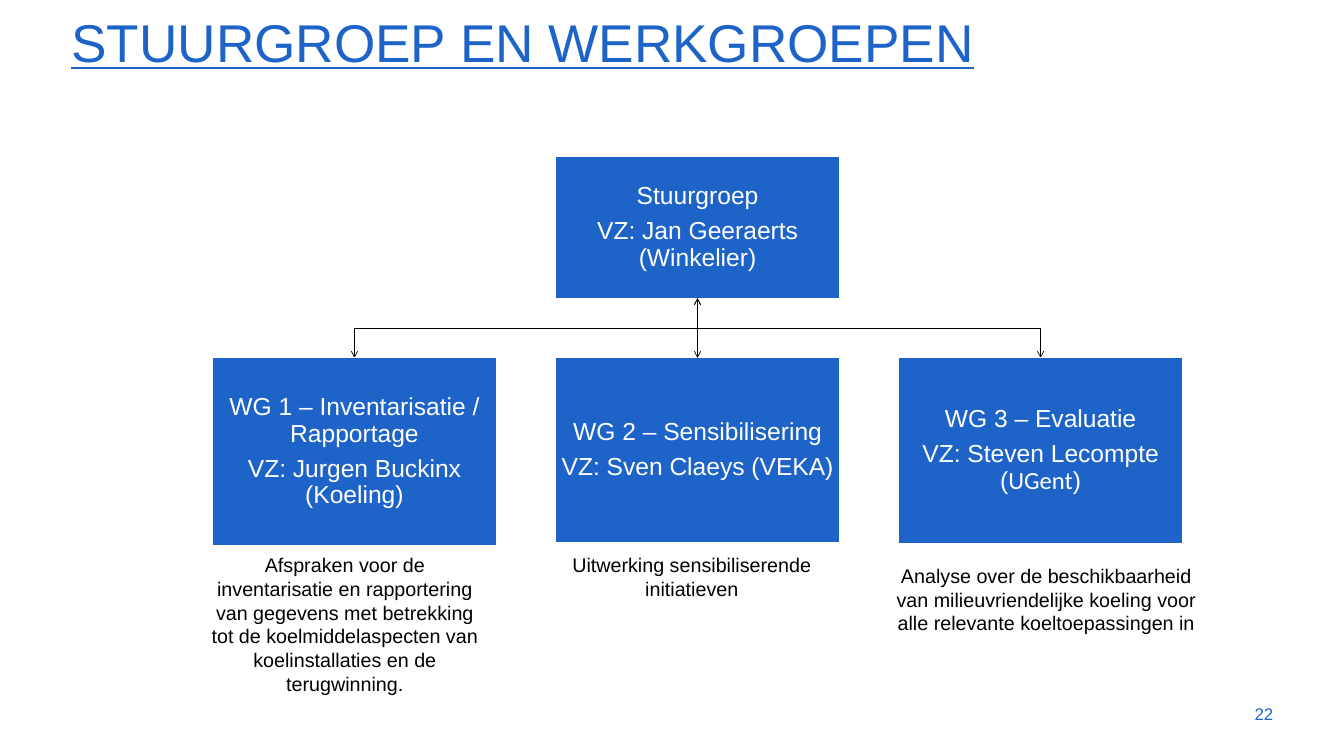
from lxml.etree import SubElement
from pptx import Presentation
from pptx.dml.color import RGBColor
from pptx.enum.shapes import MSO_CONNECTOR, MSO_SHAPE
from pptx.enum.text import MSO_ANCHOR as ANCHOR, PP_ALIGN as ALIGN
from pptx.oxml.ns import qn
from pptx.util import Pt

BLUE, WHITE, BLACK = "1E64C8", "FFFFFF", "000000"


def rgb(code):
    return RGBColor.from_string(code)


def write(shape, paragraphs, size, color, align, anchor, spacing=1.0, after=0, inset=None):
    frame = shape.text_frame
    frame.word_wrap = True
    frame.vertical_anchor = anchor
    if inset is not None:
        frame.margin_left = frame.margin_right = Pt(inset)
        frame.margin_top = frame.margin_bottom = Pt(inset)
    for index, runs in enumerate(paragraphs):
        paragraph = frame.add_paragraph() if index else frame.paragraphs[0]
        paragraph.alignment = align
        paragraph.line_spacing = spacing
        paragraph.space_before = Pt(0)
        paragraph.space_after = Pt(after)
        for words, font_name in runs:
            run = paragraph.add_run()
            run.text = words
            run.font.name = font_name
            run.font.size = Pt(size)
            run.font.color.rgb = rgb(color)


deck = Presentation()
deck.slide_width, deck.slide_height = Pt(1365.12), Pt(768.24)
slide = deck.slides.add_slide(deck.slide_layouts[6])
shapes = slide.shapes

title = shapes.add_textbox(Pt(65.5), Pt(10.8), Pt(1237), Pt(67.7))
write(title, [[("STUURGROEP EN WERKGROEPEN", "Arial")]], 54, BLUE, ALIGN.LEFT, ANCHOR.BOTTOM, 0.9)
title.text_frame.paragraphs[0].runs[0].font.underline = True

page_number = shapes.add_textbox(Pt(1227.6), Pt(704.9), Pt(72.7), Pt(41))
write(page_number, [[("22", "Arial")]], 17.1, BLUE, ALIGN.RIGHT, ANCHOR.MIDDLE)

group_width, group_step = 288, 348.48
first_left, steering_top, steering_height, working_top = 216, 159.12, 144, 363.6
steering_bottom = steering_top + steering_height
branch_y = (steering_bottom + working_top) / 2
lefts = [first_left + group_step * column for column in range(3)]
centers = [left + group_width / 2 for left in lefts]

branches = []
for center in (centers[2], centers[0]):
    outline = shapes.build_freeform(Pt(centers[1]), Pt(steering_bottom))
    outline.add_line_segments(
        [(Pt(centers[1]), Pt(branch_y)), (Pt(center), Pt(branch_y)), (Pt(center), Pt(working_top))],
        close=False,
    )
    branch = outline.convert_to_shape()
    branch.shadow.inherit = False
    branch.fill.background()
    branches.append((branch, ("headEnd", "tailEnd")))

groups = [
    (lefts[1], steering_top, steering_height,
     [[("Stuurgroep", "Arial")], [("VZ: Jan Geeraerts (Winkelier)", "Arial")]]),
    (lefts[0], working_top, 190.8,
     [[("WG 1 – Inventarisatie / Rapportage", "Arial")], [("VZ: Jurgen Buckinx (Koeling)", "Arial")]]),
    (lefts[1], working_top, 187.92,
     [[("WG 2 – Sensibilisering", "Arial")], [("VZ: Sven Claeys (VEKA)", "Arial")]]),
    (lefts[2], working_top, 188.64,
     [[("WG 3 – Evaluatie", "Arial")],
      [("VZ: Steven Lecompte (", "Arial"), ("UGent", "Calibri"), (")", "Arial")]]),
]
boxes = []
for left, top, height, paragraphs in groups:
    box = shapes.add_shape(MSO_SHAPE.RECTANGLE, Pt(left), Pt(top), Pt(group_width), Pt(height))
    box.shadow.inherit = False
    box.fill.solid()
    box.fill.fore_color.rgb = rgb(BLUE)
    box.line.color.rgb = rgb(WHITE)
    box.line.width = Pt(1)
    write(box, paragraphs, 25, WHITE, ALIGN.CENTER, ANCHOR.MIDDLE, 0.9, 8.75, 1.25)
    boxes.append(box)

trunk = shapes.add_connector(
    MSO_CONNECTOR.STRAIGHT, Pt(centers[1]), Pt(steering_bottom), Pt(centers[1]), Pt(working_top)
)
trunk.begin_connect(boxes[0], 2)
trunk.end_connect(boxes[2], 0)
branches.append((trunk, ("tailEnd",)))

for branch, arrow_ends in branches:
    branch.line.color.rgb = rgb(BLACK)
    branch.line.width = Pt(0.75)
    for arrow_end in arrow_ends:
        SubElement(branch.line._get_or_add_ln(), qn(f"a:{arrow_end}"), type="arrow")
SubElement(trunk._element.spPr, qn("a:effectLst"))

tasks = [
    (201.6, 558.7, 297.4, 152.6,
     "Afspraken voor de inventarisatie en rapportering van gegevens met betrekking "
     "tot de koelmiddelaspecten van koelinstallaties en de terugwinning."),
    (897.8, 569.5, 329.8, 79.9,
     "Analyse over de beschikbaarheid van milieuvriendelijke koeling voor "
     "alle relevante koeltoepassingen in"),
    (550.1, 558.7, 305.3, 55.4, "Uitwerking sensibiliserende initiatieven"),
]
for left, top, width, height, words in tasks:
    task = shapes.add_textbox(Pt(left), Pt(top), Pt(width), Pt(height))
    write(task, [[(words, "Arial")]], 20, BLACK, ALIGN.CENTER, ANCHOR.TOP)

deck.save("out.pptx")
